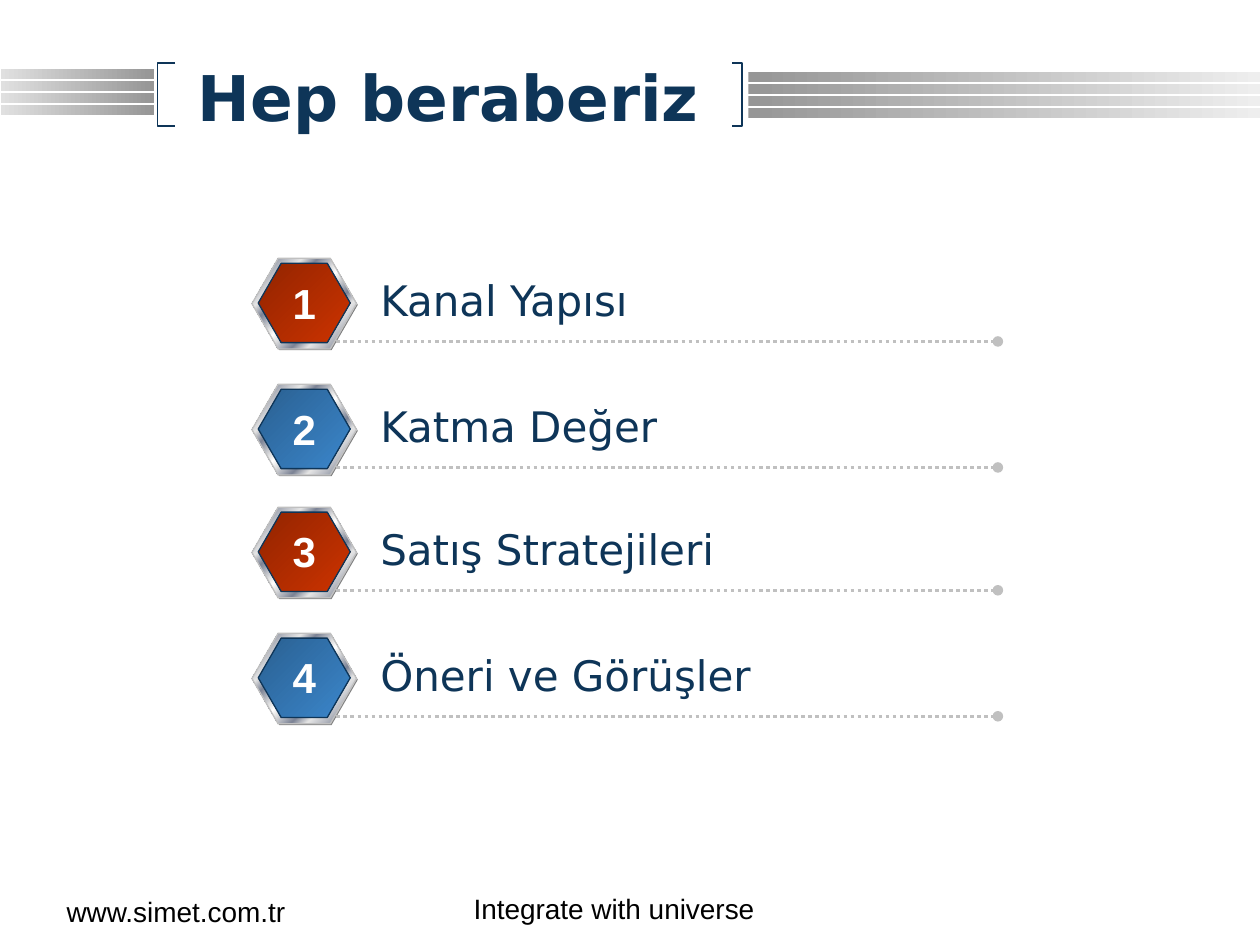
"""Build the agenda slide with four numbered hexagon rows."""
from lxml import etree
from pptx import Presentation, util as u
from pptx.dml.color import RGBColor
from pptx.enum import dml, shapes, text
from pptx.oxml.ns import qn

NAVY, GREY = "0E3558", "C0C0C0"
SANS, ARIAL = "DejaVu Sans", "Arial"
RED = [(0, "922400"), (100, "CC3300")]
BLUE = [(0, "2A6091"), (100, "3B86CB")]
STEEL = [(0, "E6E6E6"), (7, "7D8496"), (26, "E6E6E6"), (34, "7D8496"),
         (46, "E6E6E6"), (50, "FFFFFF"), (54, "E6E6E6"), (66, "7D8496"),
         (74, "E6E6E6"), (93, "7D8496"), (100, "E6E6E6")]
ROWS = [("Kanal Yapısı", 2.21, RED), ("Katma Değer", 2.42, BLUE),
        ("Satış Stratejileri", 2.93, RED), ("Öneri ve Görüşler", 4.6, BLUE)]
BARS = [(0.01, 0.55, 1.21, [(0, "E0E0E0"), (100, "969696")]),
        (5.94, 0.57, 4.06, [(0, "969696"), (100, "EEEEEE")])]
HOOKS = [(1.39, 1.25), (5.81, 5.89)]
FOOT = [("Integrate with universe", 3.66, 7.03, 3.38, 0.34),
        ("www.simet.com.tr", 0.43, 7.05, 2.62, 0.32)]

deck = Presentation()
deck.slide_width, deck.slide_height = u.Inches(10), u.Inches(7.5)
slide = deck.slides.add_slide(deck.slide_layouts[6])


def rgb(code):
    """Turn a hex string into a colour."""
    return RGBColor.from_string(code)


def inch(*nums):
    """Turn numbers into inch lengths."""
    return [u.Inches(n) for n in nums]


def blend(shape, stops, angle):
    """Fill a shape with a linear gradient."""
    shape.fill.gradient()
    shape.fill.gradient_angle = -angle % 360
    ramp = next(shape._element.iter(qn("a:gsLst")))
    for old in list(ramp):
        ramp.remove(old)
    for pos, code in stops:
        stop = etree.SubElement(ramp, qn("a:gs"), pos=str(pos * 1000))
        etree.SubElement(stop, qn("a:srgbClr"), val=code)


def block(kind, box, fill, angle=0, edge=None):
    """Add a preset shape with a plain or gradient fill."""
    shape = slide.shapes.add_shape(kind, *inch(*box))
    shape.shadow.inherit = False
    if isinstance(fill, str):
        shape.fill.solid()
        shape.fill.fore_color.rgb = rgb(fill)
    else:
        blend(shape, fill, angle)
    if edge:
        shape.line.color.rgb = rgb(edge)
        shape.line.width = u.Pt(0.75)
    else:
        shape.line.fill.background()
    return shape


def hexa(box, fill, edge=None):
    """Add a regular hexagon."""
    block(shapes.MSO_SHAPE.HEXAGON, box, fill, 45, edge).adjustments[0] = 0.289


def label(words, box, size, font, code, bold=False, mid=False, wrap=True):
    """Add a one-run text box."""
    frame = slide.shapes.add_textbox(*inch(*box)).text_frame
    frame.word_wrap = wrap
    para = frame.paragraphs[0]
    para.alignment = text.PP_ALIGN.CENTER if mid else text.PP_ALIGN.LEFT
    run = para.add_run()
    run.text = words
    run.font.size, run.font.name, run.font.bold = u.Pt(size), font, bold
    run.font.color.rgb = rgb(code)
    return frame


def hook(tip, back):
    """Add one square bracket beside the title."""
    pen = slide.shapes.build_freeform(*inch(tip, 0.5))
    pen.add_line_segments([inch(back, 0.5), inch(back, 1), inch(tip, 1)], close=False)
    shape = pen.convert_to_shape()
    shape.shadow.inherit = False
    shape.fill.background()
    shape.line.color.rgb = rgb(NAVY)
    shape.line.width = u.Pt(0.75)


def dots(left, right, top):
    """Add a dotted rule that ends in a round dot."""
    rule = slide.shapes.add_connector(
        shapes.MSO_CONNECTOR.STRAIGHT, *inch(left, top, right, top))
    rule.line.color.rgb = rgb(GREY)
    rule.line.width = u.Pt(2)
    rule.line.dash_style = dml.MSO_LINE.ROUND_DOT
    props = rule._element.spPr
    etree.SubElement(props.find(qn("a:ln")), qn("a:tailEnd"), type="oval")
    etree.SubElement(props, qn("a:effectLst"))


for left, top, wide, stops in BARS:
    for n in range(4):
        block(shapes.MSO_SHAPE.RECTANGLE, (left, top + n * 0.095, wide, 0.08), stops)
for tip, back in HOOKS:
    hook(tip, back)
title = label("Hep beraberiz", (1.31, 0.5, 4.5, 0.53), 36, SANS, NAVY, True, True)
title.vertical_anchor = text.MSO_ANCHOR.MIDDLE

for n, (words, wide, stops) in enumerate(ROWS):
    pair, odd = divmod(n, 2)
    top = 2.05 + pair * 1.975 + odd
    hexa((2.01, top + 0.01, 0.83, 0.72), "808080")
    hexa((2, top, 0.83, 0.72), STEEL, GREY)
    hexa((2.05, top + 0.04, 0.73, 0.63), stops, NAVY)
    dots(2.67, 7.92, top + 0.66)
    label(words, (2.92, top + 0.08, wide, 0.5), 24, SANS, NAVY, wrap=False)
    label(str(n + 1), (2.22, top + 0.1, 0.39, 0.5), 24, ARIAL, "FFFFFF",
          True, True, False)

for words, *box in FOOT:
    label(words, box, 16, ARIAL, "000000")

deck.save("out.pptx")
